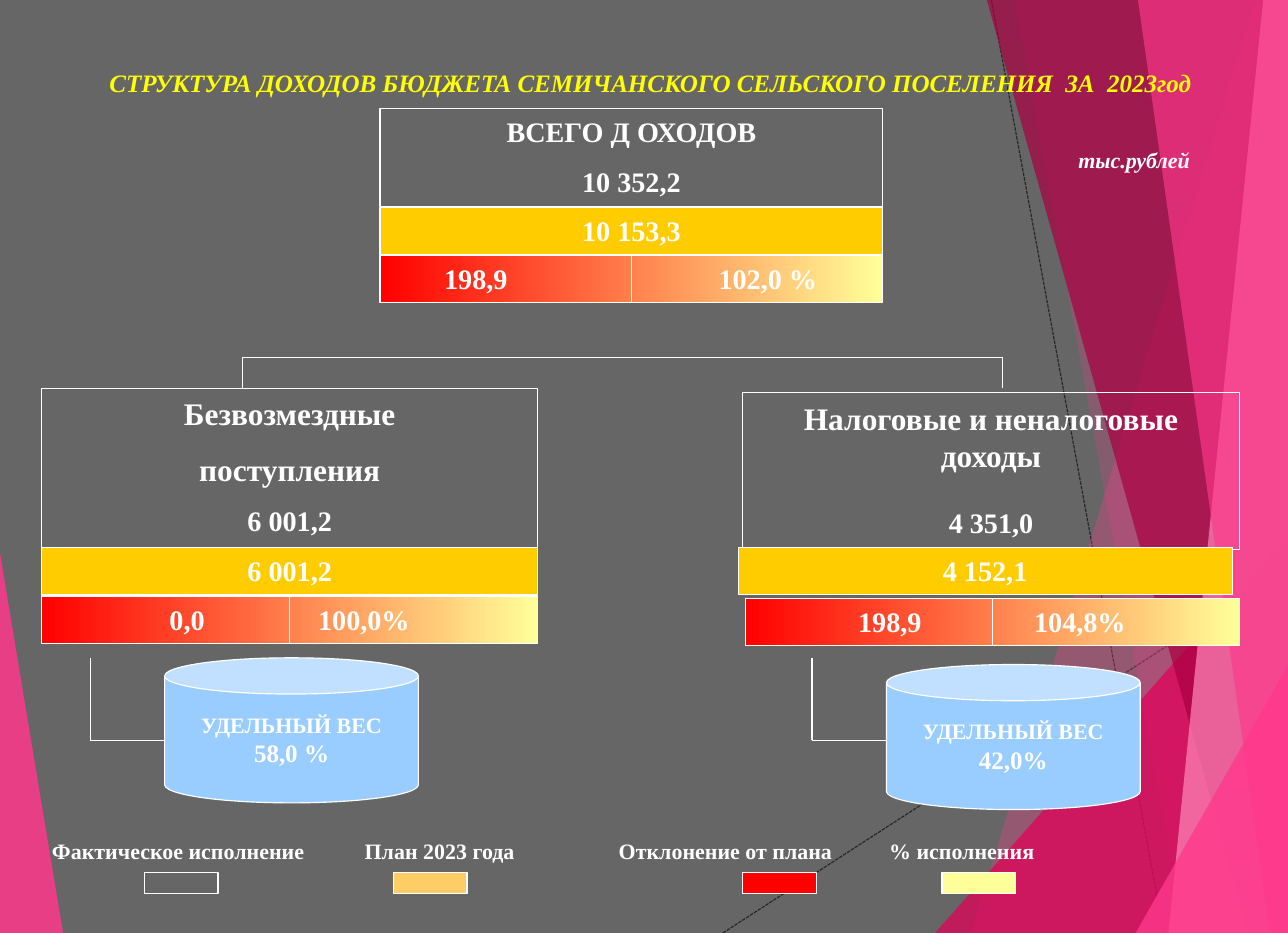
from lxml import etree
from pptx import Presentation
from pptx.dml.color import RGBColor
from pptx.enum.dml import MSO_LINE
from pptx.enum.shapes import MSO_CONNECTOR, MSO_SHAPE
from pptx.enum.text import MSO_ANCHOR, MSO_AUTO_SIZE, PP_ALIGN
from pptx.oxml.ns import qn
from pptx.util import Pt

RECT, CAN = MSO_SHAPE.RECTANGLE, MSO_SHAPE.CAN
STRAIGHT, DASH = MSO_CONNECTOR.STRAIGHT, MSO_LINE.SQUARE_DOT
LEFT, CENTER = PP_ALIGN.LEFT, PP_ALIGN.CENTER
TOP, MIDDLE = MSO_ANCHOR.TOP, MSO_ANCHOR.MIDDLE
NO_AUTOFIT = MSO_AUTO_SIZE.NONE
TITLE_ONLY = 5

WHITE = RGBColor(0xFF, 0xFF, 0xFF)
YELLOW = RGBColor(0xFF, 0xFF, 0x00)
GRAY = RGBColor(0x66, 0x66, 0x66)
DARK = RGBColor(0x26, 0x26, 0x26)
GOLD = RGBColor(0xFF, 0xCC, 0x00)
ORANGE = RGBColor(0xFF, 0xCC, 0x66)
RED = RGBColor(0xFF, 0x00, 0x00)
CREAM = RGBColor(0xFF, 0xFF, 0x99)
BLUE = RGBColor(0x99, 0xCC, 0xFF)
PINK = RGBColor(0xFF, 0x38, 0x8C)
MAGENTA = RGBColor(0xE4, 0x00, 0x59)
CRIMSON = RGBColor(0xAB, 0x00, 0x43)
ROSE = RGBColor(0xFF, 0x88, 0xBA)

FONT = "Times New Roman"
W, H = 822.24, 595.44
ROW_H = 30.2

# Content: paragraphs are (text, size, space before)
TITLE = "СТРУКТУРА ДОХОДОВ БЮДЖЕТА СЕМИЧАНСКОГО СЕЛЬСКОГО ПОСЕЛЕНИЯ  ЗА  2023год"
UNITS = "тыс.рублей"
BUDGET = [
    dict(fact=[("ВСЕГО Д ОХОДОВ", 18, 0), ("10 352,2", 18, 10)],
         fact_box=(242.6, 69.1, 321.1, 62.8),
         plan="10 153,3", plan_box=(242.6, 132.2, 321.1, ROW_H),
         result_box=(242.6, 162.7, 321.1, ROW_H),
         results=[("198,9", 303.8), ("102,0 %", 490.2)]),
    dict(fact=[("Безвозмездные", 20, 0), ("поступления", 20, 11.5),
               ("6 001,2", 18, 10)],
         fact_box=(26.6, 247.7, 316.8, 101.5),
         plan="6 001,2", plan_box=(26.6, 349.2, 316.8, ROW_H),
         result_box=(26.6, 380.4, 316.8, ROW_H),
         results=[("0,0", 119.4), ("100,0%", 232.3)]),
    dict(fact=[("Налоговые и неналоговые доходы", 20, 0), ("4 351,0", 18, 19.6)],
         fact_box=(474.3, 250.6, 316.8, 100.1),
         plan="4 152,1", plan_box=(471.2, 349.2, 315.4, ROW_H),
         result_box=(475.9, 381.9, 315.4, ROW_H),
         results=[("198,9", 568.1), ("104,8%", 689.4)]),
]
SHARES = [("58,0 %", 105.1, 419.8), ("42,0%", 565.9, 424.1)]
LEGEND = [  # label, label left, swatch left, swatch colour
    ("Фактическое исполнение", 33.2, 92.2, None),
    ("План 2023 года", 232.8, 251.2, ORANGE),
    ("Отклонение от плана", 395, 474.3, RED),
    ("% исполнения", 567.6, 601.4, CREAM),
]

# Backdrop
DASHES = [(461.5, H, W, 362.4), (632.9, 0, 743, H)]
FACETS = [  # corners, colour, opacity in percent
    ([(0, 353), (40.3, H), (0, H)], PINK, 85),
    ([(801.4, 0), (619.9, H), (W, H), (W, 0)], PINK, 30),
    ([(648, 0), (756, H), (W, H), (W, 0)], PINK, 20),
    ([(596.9, H), (W, 340.6), (W, H)], MAGENTA, 72),
    ([(630, 0), (797, H), (W, H), (W, 0)], CRIMSON, 70),
    ([(806.4, 0), (745.9, H), (W, H), (W, 0)], ROSE, 70),
    ([(726.5, 0), (810.7, H), (W, H), (W, 0)], PINK, 65),
    ([(725, H), (W, 424.8), (W, H)], PINK, 80),
]

# Bracket from the total to its two parts, and elbows to the shares
BRACKET_Y, PANEL_TOP, BRACKET_XS = 228.2, 247.7, (154.8, 640.1)
ELBOW_TOP, ELBOW_Y, ELBOW_W = 419.8, 472.4, 47.5


def write_text(shape, paragraphs, size=18, color=WHITE, italic=False,
               align=CENTER, anchor=TOP, inset=8, wrap=True):
    if isinstance(paragraphs, str):
        paragraphs = [(paragraphs, size, 0)]
    frame = shape.text_frame
    frame.auto_size, frame.word_wrap = NO_AUTOFIT, wrap
    frame.vertical_anchor = anchor
    frame.margin_left = frame.margin_right = Pt(inset)
    frame.margin_top = frame.margin_bottom = Pt(4)
    for i, (text, points, before) in enumerate(paragraphs):
        paragraph = frame.add_paragraph() if i else frame.paragraphs[0]
        paragraph.alignment, paragraph.space_before = align, Pt(before)
        run = paragraph.add_run()
        run.text = text
        font = run.font
        font.name, font.size, font.bold, font.italic = FONT, Pt(points), True, italic
        font.color.rgb = color


def add_label(slide, text, box, **text_format):
    label = slide.shapes.add_textbox(*map(Pt, box))
    write_text(label, text, **text_format)


def add_box(slide, box, fill=None, kind=RECT):
    shape = slide.shapes.add_shape(kind, *map(Pt, box))
    shape.shadow.inherit = False
    shape.line.color.rgb, shape.line.width = WHITE, Pt(0.75)
    if fill is None:
        shape.fill.background()
    else:
        shape.fill.solid()
        shape.fill.fore_color.rgb = fill
    return shape


def add_line(slide, x1, y1, x2, y2, color=WHITE):
    line = slide.shapes.add_connector(STRAIGHT, Pt(x1), Pt(y1), Pt(x2), Pt(y2))
    line.line.color.rgb, line.line.width = color, Pt(0.75)
    etree.SubElement(line.element.spPr, qn("a:effectLst"))
    return line


def add_facet(slide, corners, color, opacity):
    points = [(Pt(x), Pt(y)) for x, y in corners]
    builder = slide.shapes.build_freeform(*points[0])
    builder.add_line_segments(points[1:], close=True)
    facet = builder.convert_to_shape()
    facet.shadow.inherit = False
    facet.line.fill.background()
    facet.fill.solid()
    facet.fill.fore_color.rgb = color
    tone = facet.element.spPr.find(qn("a:solidFill"))[0]
    etree.SubElement(tone, qn("a:alpha"), val=str(opacity * 1000))


def add_results(slide, box, results):
    bar = add_box(slide, box)
    bar.fill.gradient()
    bar.fill.gradient_angle = 0
    for stop, color in zip(bar.fill.gradient_stops, (RED, CREAM)):
        stop.color.rgb = color
    left, top, width, height = box
    middle = left + width / 2
    divider = add_line(slide, middle, top, middle, top + height)
    divider.begin_connect(bar, 0)
    divider.end_connect(bar, 2)
    for text, center in results:
        add_label(slide, text, (center - 45, top, 90, height))


def main():
    prs = Presentation()
    prs.slide_width, prs.slide_height = Pt(W), Pt(H)
    slide = prs.slides.add_slide(prs.slide_layouts[TITLE_ONLY])
    slide.background.fill.solid()
    slide.background.fill.fore_color.rgb = GRAY

    # Backdrop
    for ends in DASHES:
        add_line(slide, *ends, color=DARK).line.dash_style = DASH
    for facet in FACETS:
        add_facet(slide, *facet)

    # Title, brought in front of the backdrop
    title = slide.shapes.title
    slide.shapes.element.append(title.element)
    title.left, title.top, title.width, title.height = map(Pt, (44.6, 38.9, 741.6, 27.4))
    write_text(title, TITLE, size=16, color=YELLOW, italic=True)
    add_label(slide, UNITS, (680.4, 89.3, 105.8, 25.2), size=14, italic=True, align=LEFT)

    # Total and its parts
    for part in BUDGET:
        write_text(add_box(slide, part["fact_box"]), part["fact"])
        write_text(add_box(slide, part["plan_box"], GOLD), part["plan"])
        add_results(slide, part["result_box"], part["results"])

    # Bracket
    add_line(slide, BRACKET_XS[0], BRACKET_Y, BRACKET_XS[1], BRACKET_Y)
    for x in BRACKET_XS:
        add_line(slide, x, BRACKET_Y, x, PANEL_TOP)

    # Shares
    for share, left, top in SHARES:
        x = left - ELBOW_W
        add_line(slide, x, ELBOW_TOP, x, ELBOW_Y)
        add_line(slide, x, ELBOW_Y, left, ELBOW_Y)
        can = add_box(slide, (left, top, 162, 92.6), BLUE, CAN)
        write_text(can, [("УДЕЛЬНЫЙ ВЕС", 14, 0), (share, 16, 0)],
                   anchor=MIDDLE, wrap=False)

    # Legend
    for label, label_left, swatch_left, color in LEGEND:
        add_label(slide, label, (label_left, 530.8, 180, 25.2),
                  size=14, align=LEFT, inset=0)
        add_box(slide, (swatch_left, 557, 47, 13.2), color)

    prs.save("out.pptx")


if __name__ == "__main__":
    main()
